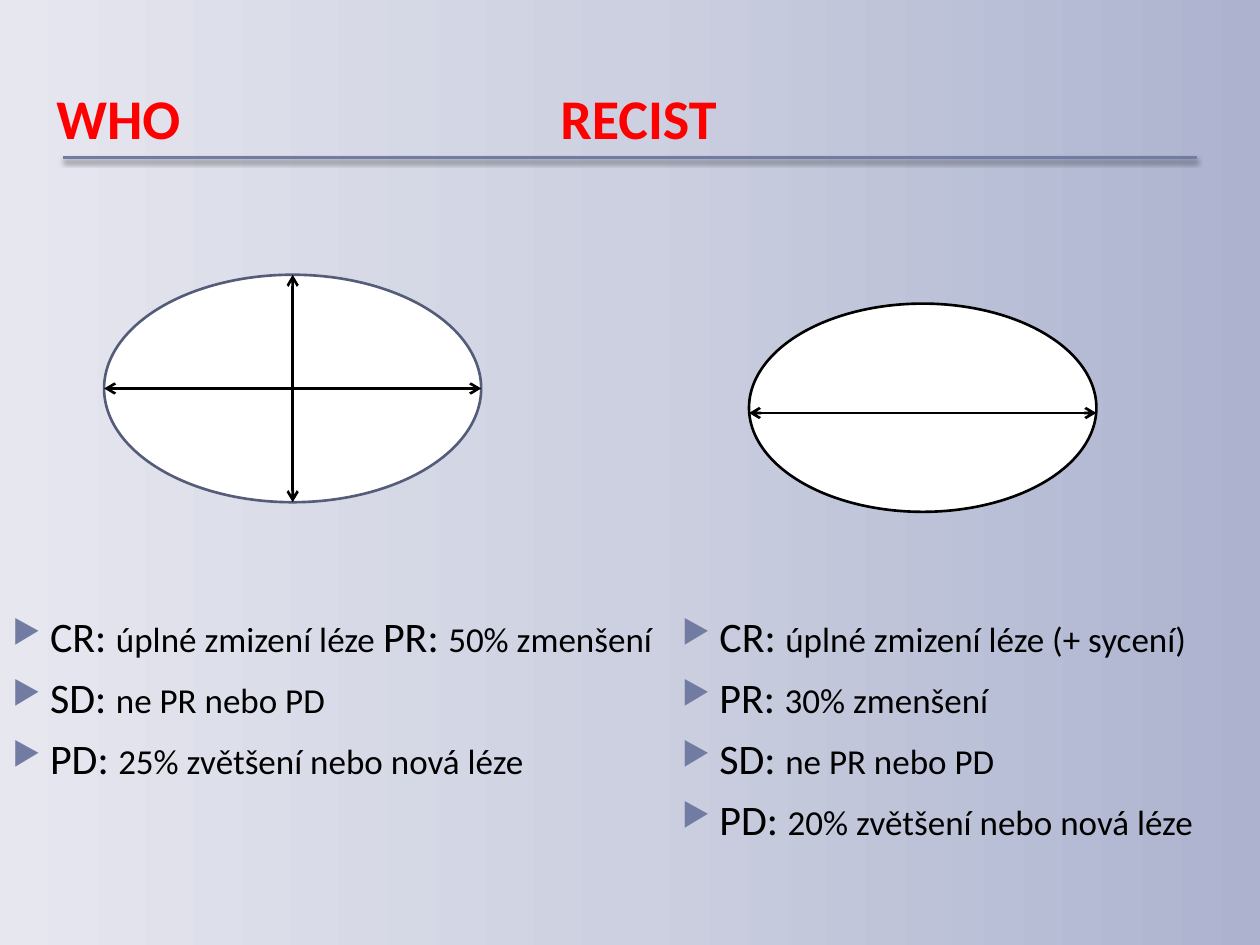
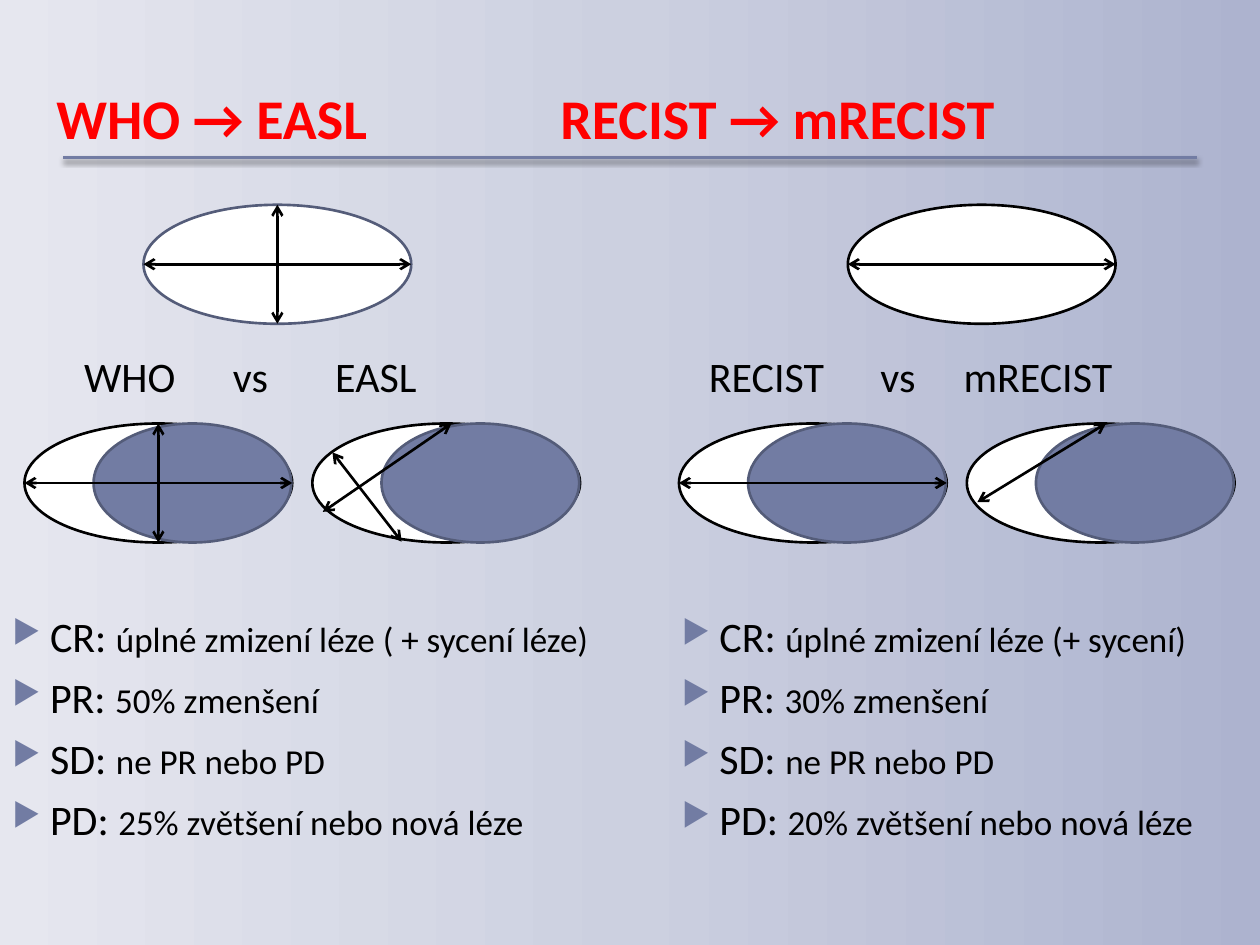
from lxml import etree
from pptx import Presentation
from pptx.dml.color import RGBColor
from pptx.enum.shapes import MSO_CONNECTOR as CONNECTOR, MSO_SHAPE as SHAPE
from pptx.enum.text import MSO_ANCHOR as ANCHOR, MSO_AUTO_SIZE as AUTO_SIZE, PP_ALIGN as ALIGN
from pptx.oxml.ns import qn
from pptx.util import Pt

RED = RGBColor(0xFF, 0x00, 0x00)
BLACK = RGBColor(0x00, 0x00, 0x00)
WHITE = RGBColor(0xFF, 0xFF, 0xFF)
SLATE = RGBColor(0x72, 0x7C, 0xA3)
DARK_SLATE = RGBColor(0x54, 0x5C, 0x79)
BACKDROP = [(0, RGBColor(0xAD, 0xB3, 0xCF)), (50, RGBColor(0xCC, 0xD0, 0xE0)),
            (100, RGBColor(0xE6, 0xE7, 0xEF))]

FONT = "Calibri"
TITLE_TAB = 288
LINE_WIDTH = 1.5
LESION_W, LESION_H = 153, 68
CORE_DX, CORE_W = 39.5, 113
PAIR_STEP = 164.5
PAIR_TOP = 242
LABEL_TOP = 196.5
TOP_LESION_Y = 117

WHO_CRITERIA = [("SD: ", "ne PR nebo PD"), ("PD: ", "25% zvětšení nebo nová léze")]
RECIST_CRITERIA = [("CR: ", "úplné zmizení léze (+ sycení)"), ("PR: ", "30% zmenšení"),
                   ("SD: ", "ne PR nebo PD"), ("PD: ", "20% zvětšení nebo nová léze")]


def add_xml(parent, tag, **attributes):
    return etree.SubElement(parent, qn(tag), attributes)


def add_tabs(paragraph, stops):
    tab_list = add_xml(paragraph._p.get_or_add_pPr(), "a:tabLst")
    for stop in stops:
        add_xml(tab_list, "a:tab", pos=str(Pt(stop)), algn="l")


class Deck:
    def __init__(self):
        self.prs = Presentation()
        self.prs.slide_width, self.prs.slide_height = Pt(720), Pt(540)

    def new_slide(self, title):
        self.slide = self.prs.slides.add_slide(self.prs.slide_layouts[5])
        self.canvas = self.slide.shapes
        self.backdrop()
        self.title(title)
        self.title_rule()

    def start_group(self):
        """Send the elements that follow into a new group."""
        self.canvas = self.slide.shapes.add_group_shape().shapes

    def backdrop(self):
        fill = self.slide.background.fill
        fill.gradient()
        fill.gradient_angle = 180
        stops = self.slide.background._cSld.find(".//" + qn("a:gsLst"))
        for stop in list(stops):
            stops.remove(stop)
        for percent, color in BACKDROP:
            stop = add_xml(stops, "a:gs", pos=str(percent * 1000))
            add_xml(stop, "a:srgbClr", val=str(color))

    def style(self, run, size, color=BLACK, bold=False):
        run.font.name, run.font.size = FONT, Pt(size)
        run.font.color.rgb, run.font.bold = color, bold

    def title(self, text):
        title = self.slide.shapes.title
        title.left, title.top, title.width, title.height = Pt(25), Pt(12), Pt(680.5), Pt(78)
        frame = title.text_frame
        frame.text = text
        frame.auto_size = AUTO_SIZE.NONE
        frame.vertical_anchor = ANCHOR.BOTTOM
        paragraph = frame.paragraphs[0]
        paragraph.alignment = ALIGN.LEFT
        add_tabs(paragraph, [TITLE_TAB])
        self.style(paragraph.runs[0], 32, RED, bold=True)

    def line(self, start, end, color=BLACK):
        """Draw a plain line; return its shape properties and effect list."""
        line = self.canvas.add_connector(CONNECTOR.STRAIGHT, *map(Pt, start + end))
        line.line.color.rgb, line.line.width = color, Pt(LINE_WIDTH)
        properties = line._element.spPr
        return properties, add_xml(properties, "a:effectLst")

    def title_rule(self):
        _, effects = self.line((36, 90), (684, 90), SLATE)
        shadow = add_xml(effects, "a:outerShdw", blurRad=str(Pt(3)), dist=str(Pt(2)),
                         dir="5400000", rotWithShape="0")
        add_xml(add_xml(shadow, "a:srgbClr", val=str(BLACK)), "a:alpha", val="40000")

    def diameter(self, start, end):
        """Draw a measuring line with an arrowhead at each end."""
        properties, _ = self.line(start, end)
        outline = properties.find(qn("a:ln"))
        for tag in ("a:headEnd", "a:tailEnd"):
            add_xml(outline, tag, type="arrow")

    def ellipse(self, x, y, width, height, fill=WHITE, outline=BLACK):
        ellipse = self.canvas.add_shape(SHAPE.OVAL, *map(Pt, (x, y, width, height)))
        ellipse.shadow.inherit = False
        ellipse.fill.solid()
        ellipse.fill.fore_color.rgb = fill
        ellipse.line.color.rgb, ellipse.line.width = outline, Pt(LINE_WIDTH)

    def measure(self, x, y, width, height, both=False):
        """Mark the long diameter, and the short one too if both."""
        middle, center = y + height / 2, x + width / 2
        self.diameter((x, middle), (x + width, middle))
        if both:
            self.diameter((center, y), (center, y + height))

    def lesion(self, x, y, width, height, both=False):
        self.ellipse(x, y, width, height, outline=DARK_SLATE if both else BLACK)
        self.measure(x, y, width, height, both)

    def lesion_pair(self, x, both=False):
        """Draw two lesions with a dark core; measure the whole of the first."""
        for left in (x, x + PAIR_STEP):
            self.ellipse(left, PAIR_TOP, LESION_W, LESION_H)
            self.ellipse(left + CORE_DX, PAIR_TOP, CORE_W, LESION_H, SLATE, DARK_SLATE)
        self.measure(x, PAIR_TOP, LESION_W, LESION_H, both)

    def text_frame(self, x, y, width, height):
        frame = self.canvas.add_textbox(*map(Pt, (x, y, width, height))).text_frame
        frame.word_wrap = True
        return frame

    def comparison(self, x, width, words, stops):
        paragraph = self.text_frame(x, LABEL_TOP, width, 36).paragraphs[0]
        paragraph.text = "".join("\t" + word for word in words)
        add_tabs(paragraph, stops)
        self.style(paragraph.runs[0], 24)

    def criteria(self, x, items):
        """List the response criteria, each a row of code and meaning in turn."""
        frame = self.text_frame(x, 345.5, 397.5, 389)
        for index, item in enumerate(items):
            paragraph = frame.add_paragraph() if index else frame.paragraphs[0]
            paragraph.space_before = Pt(6)
            properties = paragraph._p.get_or_add_pPr()
            properties.set("marL", str(Pt(21.5)))
            properties.set("indent", str(-Pt(21.5)))
            add_xml(add_xml(properties, "a:buClr"), "a:srgbClr", val=str(SLATE))
            add_xml(properties, "a:buSzPct", val="76000")
            add_xml(properties, "a:buChar", char="▶")
            for position, part in enumerate(item):
                run = paragraph.add_run()
                run.text = part
                self.style(run, 20 if position % 2 else 24)

    def both_criteria(self, who_items):
        self.criteria(0, who_items)
        self.criteria(382.5, RECIST_CRITERIA)


def build_basic_slide(deck):
    deck.new_slide("WHO\tRECIST")
    deck.both_criteria([("CR: ", "úplné zmizení léze ", "PR: ", "50% zmenšení")] + WHO_CRITERIA)
    deck.lesion(59.5, 157, 215.5, 130, both=True)
    deck.ellipse(428, 173.5, 198.5, 119)
    deck.diameter((428, 236), (626.5, 236))


def build_modified_slide(deck):
    deck.new_slide("WHO → EASL\tRECIST → mRECIST")
    deck.both_criteria([("CR: ", "úplné zmizení léze ( + sycení léze)"),
                        ("PR: ", "50% zmenšení")] + WHO_CRITERIA)
    deck.lesion(82, TOP_LESION_Y, LESION_W, LESION_H, both=True)
    deck.lesion(484.5, TOP_LESION_Y, LESION_W, LESION_H)

    deck.start_group()
    deck.lesion_pair(14, both=True)
    deck.diameter((258, PAIR_TOP), (184.5, 292.5))
    deck.diameter((190, 258.5), (229.5, 309.5))
    deck.comparison(20, 273.5, ["WHO", "vs", "EASL"], [21, 106, 164.5])

    deck.start_group()
    deck.lesion_pair(388)
    deck.diameter((632, PAIR_TOP), (558.5, 287))
    deck.comparison(326, 385, ["RECIST", "vs", "mRECIST"], [72, 170, 217.5])


def main():
    deck = Deck()
    build_basic_slide(deck)
    build_modified_slide(deck)
    deck.prs.save("out.pptx")


if __name__ == "__main__":
    main()
